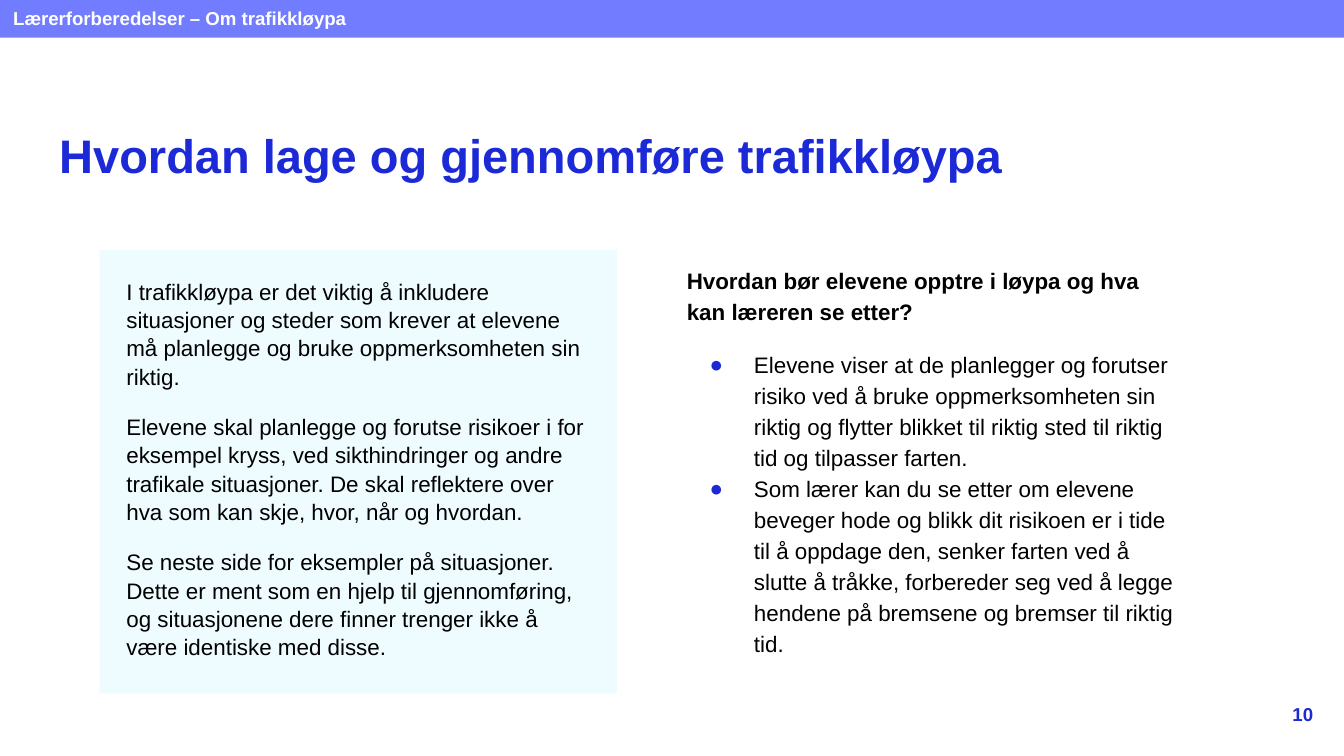
"""Build the slide on making and running the traffic course."""
from dataclasses import dataclass

from lxml import etree
from pptx import Presentation
from pptx import util as u
from pptx.dml.color import RGBColor
from pptx.enum import shapes, text
from pptx.oxml.ns import qn


@dataclass(frozen=True)
class Theme:
    font: str = "Arial"
    accent: str = "1C29D6"
    banner: str = "727CFE"
    panel: str = "EEFBFF"
    ink: str = "000000"
    light: str = "FFFFFF"
    title_size: float = 25.2
    body_size: float = 12
    small_size: float = 10


THEME = Theme()
BANNER = "Lærerforberedelser – Om trafikkløypa"
TITLE = "Hvordan lage og gjennomføre trafikkløypa"
PAGE_NUMBER = "10"
ADVICE = [
    "I trafikkløypa er det viktig å inkludere situasjoner og steder som krever at elevene må planlegge "
    "og bruke oppmerksomheten sin riktig.",
    "Elevene skal planlegge og forutse risikoer i for eksempel kryss, ved sikthindringer og andre "
    "trafikale situasjoner. De skal reflektere over hva som kan skje, hvor, når og hvordan.",
    "Se neste side for eksempler på situasjoner. Dette er ment som en hjelp til gjennomføring, og "
    "situasjonene dere finner trenger ikke å være identiske med disse.",
]
QUESTION = "Hvordan bør elevene opptre i løypa og hva kan læreren se etter?"
SIGNS = [
    "Elevene viser at de planlegger og forutser risiko ved å bruke oppmerksomheten sin riktig og "
    "flytter blikket til riktig sted til riktig tid og tilpasser farten.",
    "Som lærer kan du se etter om elevene beveger hode og blikk dit risikoen er i tide til å oppdage "
    "den, senker farten ved å slutte å tråkke, forbereder seg ved å legge hendene på bremsene og "
    "bremser til riktig tid.",
]

WIDTH, HEIGHT = 720, 405
COLUMN_TOP, COLUMN_WIDTH = 133.9, 277.2
LEFT_COLUMN, COLUMN_STEP = 53.3, 307.4
INSET, PANEL_INSET = 7.2, 14.4
PARAGRAPH_GAP = 12


def place(box, left, top, width, height):
    box.left, box.top, box.width, box.height = (u.Pt(n) for n in (left, top, width, height))


def paint(shape, color):
    shape.fill.solid()
    shape.fill.fore_color.rgb = RGBColor.from_string(color)
    shape.line.fill.background()


def write(box, lines, size, color, bold=(), insets=(INSET,) * 4,
          anchor=text.MSO_ANCHOR.TOP, align=text.PP_ALIGN.LEFT, spacing=1.0):
    frame = box.text_frame
    frame.text = "\n".join(lines)
    frame.word_wrap = True
    frame.auto_size = text.MSO_AUTO_SIZE.NONE
    frame.vertical_anchor = anchor
    frame.margin_left, frame.margin_top, frame.margin_right, frame.margin_bottom = map(u.Pt, insets)
    for index, para in enumerate(frame.paragraphs):
        para.alignment = align
        para.line_spacing = spacing
        para.space_before = para.space_after = u.Pt(0)
        for span in para.runs:
            span.font.name = THEME.font
            span.font.size = u.Pt(size)
            span.font.bold = index in bold
            span.font.color.rgb = RGBColor.from_string(color)
    return frame.paragraphs


def set_bullet(para, shown):
    props = para._p.get_or_add_pPr()
    props.set("marL", str(u.Pt(36 if shown else 0)))
    props.set("indent", str(u.Pt(-23.8 if shown else 0)))
    if shown:
        color = etree.SubElement(props, qn("a:buClr"))
        etree.SubElement(color, qn("a:srgbClr"), val=THEME.accent)
        etree.SubElement(props, qn("a:buFont"), typeface=THEME.font)
        etree.SubElement(props, qn("a:buChar"), char="●")
    else:
        etree.SubElement(props, qn("a:buNone"))


def main():
    deck = Presentation()
    deck.slide_width, deck.slide_height = u.Pt(WIDTH), u.Pt(HEIGHT)
    page = deck.slides.add_slide(deck.slide_layouts.get_by_name("Two Content"))
    title, advice, signs = page.placeholders

    place(title, 24.5, 60.5, 671, 45.4)
    write(title, [TITLE], THEME.title_size, THEME.accent, bold=(0,))

    place(advice, LEFT_COLUMN, COLUMN_TOP, COLUMN_WIDTH, 237.6)
    paint(advice, THEME.panel)
    paras = write(advice, ADVICE, THEME.body_size, THEME.ink,
                  insets=(PANEL_INSET, PANEL_INSET, PANEL_INSET, INSET), spacing=1.05)
    for index, para in enumerate(paras):
        para.space_before = u.Pt(PARAGRAPH_GAP if index else 0)
        set_bullet(para, False)

    place(signs, LEFT_COLUMN + COLUMN_STEP, COLUMN_TOP, COLUMN_WIDTH, 225.4)
    paras = write(signs, [QUESTION, *SIGNS], THEME.body_size, THEME.ink, bold=(0,), spacing=1.15)
    paras[1].space_before = u.Pt(PARAGRAPH_GAP)
    for index, para in enumerate(paras):
        set_bullet(para, index > 0)

    banner = page.shapes.add_shape(shapes.MSO_SHAPE.RECTANGLE, 0, 0, u.Pt(WIDTH), u.Pt(20.2))
    banner.shadow.inherit = False
    paint(banner, THEME.banner)
    write(banner, [BANNER], THEME.small_size, THEME.light, bold=(0,), insets=(INSET, 3.6, INSET, INSET))

    number = page.shapes.add_textbox(*map(u.Pt, (667.4, 367.2, 43.2, 31)))
    write(number, [PAGE_NUMBER], THEME.small_size, THEME.accent, bold=(0,),
          anchor=text.MSO_ANCHOR.MIDDLE, align=text.PP_ALIGN.RIGHT)

    deck.save("out.pptx")


if __name__ == "__main__":
    main()
